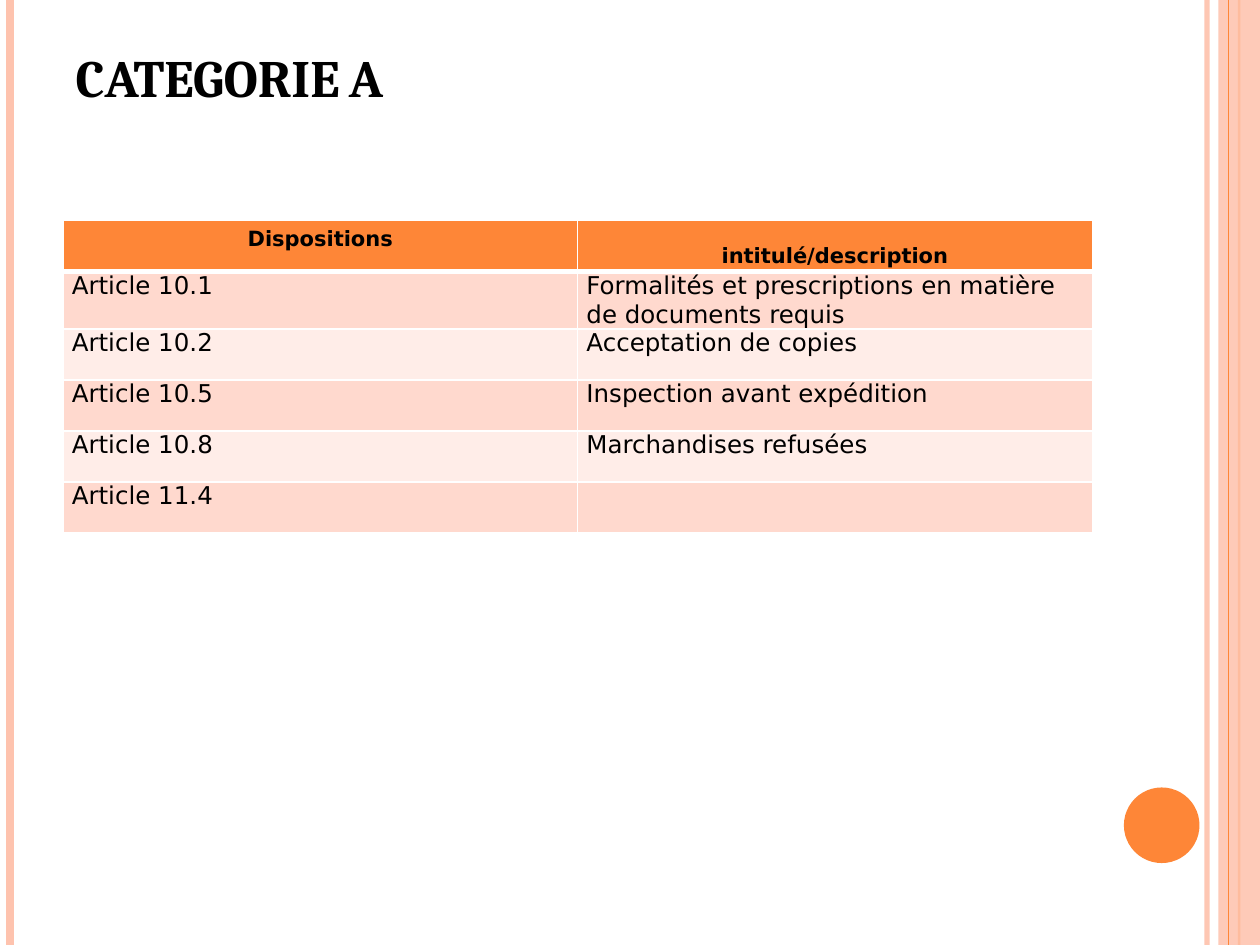
from lxml.etree import SubElement
from pptx import Presentation
from pptx.dml.color import RGBColor as RGB
from pptx.enum.shapes import MSO_CONNECTOR as CONN, MSO_SHAPE as SHAPE
from pptx.enum.text import MSO_ANCHOR as ANCHOR, PP_ALIGN as ALIGN
from pptx.oxml.ns import qn
from pptx.util import Inches, Pt

THEME = {
    "orange": RGB.from_string("FE8637"),
    "pink": RGB.from_string("FEC3AE"),
    "bands": [RGB.from_string("FFD9CE"), RGB.from_string("FFEDE8")],
    "black": RGB(0, 0, 0),
    "title": {"name": "Cambria", "size": Pt(30), "bold": True},
    "header": {"name": "DejaVu Sans", "size": Pt(12), "bold": True},
    "body": {"name": "DejaVu Sans", "size": Pt(14), "bold": False},
}
ROWS = [
    ("Dispositions", "intitulé/description"),
    ("Article 10.1", "Formalités et prescriptions en matière de documents requis"),
    ("Article 10.2", "Acceptation de copies"),
    ("Article 10.5", "Inspection avant expédition"),
    ("Article 10.8", "Marchandises refusées"),
    ("Article 11.4", ""),
]


def style(font, name):
    for key, value in THEME[name].items():
        setattr(font, key, value)
    font.color.rgb = THEME["black"]


def fade(el, percent):
    clr = next(el.iter(qn("a:srgbClr")))
    SubElement(clr, qn("a:alpha"), val=str(percent * 1000))


prs = Presentation()
prs.slide_width, prs.slide_height = Inches(10), Inches(7.5)
W, H = prs.slide_width, prs.slide_height
s = prs.slides.add_slide(prs.slide_layouts[5])

band = s.shapes.add_shape(SHAPE.RECTANGLE, int(W * 0.967), 0, int(W * 0.033), H)
dot = s.shapes.add_shape(SHAPE.OVAL, int(W * 0.892), Inches(6.25), int(W * 0.06), int(W * 0.06))
for sp, color in ((band, "pink"), (dot, "orange")):
    sp.shadow.inherit = False
    sp.fill.solid()
    sp.fill.fore_color.rgb = THEME[color]
    sp.line.fill.background()
fade(band._element.spPr, 87)

for x, color, width, alpha in (
    (0.958, "pink", 3, 93),
    (0.008, "pink", 4.5, 100),
    (0.983, "orange", 1.5, 20),
    (0.975, "orange", 0.75, 100),
):
    c = s.shapes.add_connector(CONN.STRAIGHT, int(W * x), 0, int(W * x), H)
    c.line.color.rgb = THEME[color]
    c.line.width = Pt(width)
    fade(c._element.spPr, alpha)
    SubElement(c._element.spPr, qn("a:effectLst"))
    if x == 0.983:
        c.begin_connect(band, 0)
        c.end_connect(band, 2)

left, width = int(W * 0.05), int(W * 0.817)
title = s.shapes.title
for key, value in {"left": left, "top": int(H * 0.04), "width": width, "height": Inches(0.61)}.items():
    setattr(title, key, value)
tf = title.text_frame
tf.vertical_anchor = ANCHOR.BOTTOM
p = tf.paragraphs[0]
p.alignment = ALIGN.LEFT
r = p.add_run()
r.text = "CATEGORIE A"
style(r.font, "title")
r.font._element.set("cap", "small")

table = s.shapes.add_table(len(ROWS), 2, left, Inches(1.75), width, Inches(2.43)).table
for i, row in enumerate(ROWS):
    for j, text in enumerate(row):
        cell = table.cell(i, j)
        tcPr = cell._tc.get_or_add_tcPr()
        for side in "LRTB":
            thick = (i, side) in ((0, "B"), (1, "T"))
            ln = SubElement(tcPr, qn(f"a:ln{side}"), w=str(Pt(3 if thick else 1)))
            SubElement(SubElement(ln, qn("a:solidFill")), qn("a:srgbClr"), val="FFFFFF")
        cell.fill.solid()
        cell.fill.fore_color.rgb = THEME["bands"][(i - 1) % 2] if i else THEME["orange"]
        if i or j:
            cell.margin_left = cell.margin_right = Inches(0.07)
            cell.margin_top = Inches(0 if i else 0.19)
            cell.margin_bottom = 0
        p = cell.text_frame.paragraphs[0]
        p.alignment = ALIGN.LEFT if i else ALIGN.CENTER
        if text:
            r = p.add_run()
            r.text = text
            style(r.font, "body" if i else "header")

prs.save("out.pptx")
